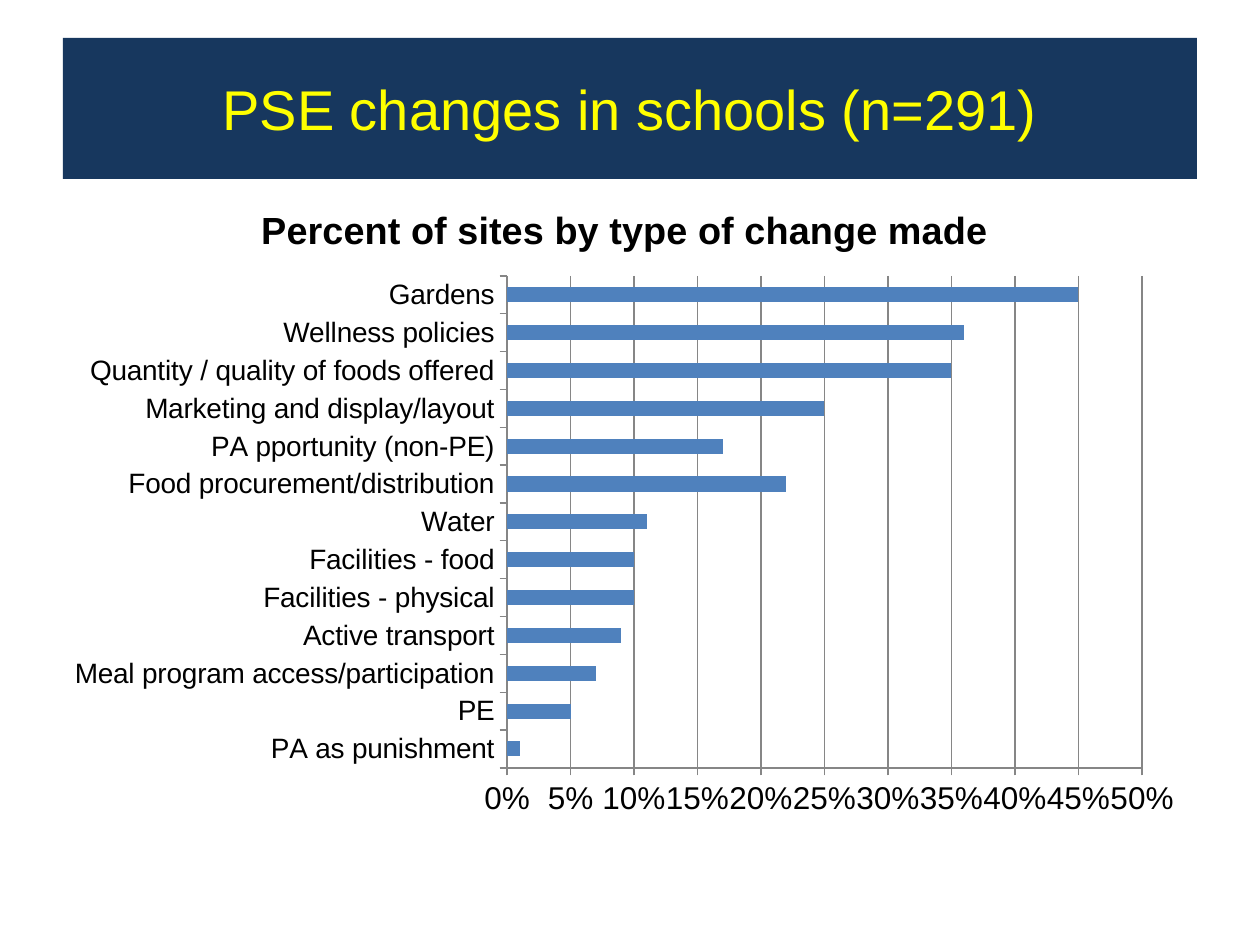
from lxml import etree
from pptx import Presentation
from pptx.chart.data import CategoryChartData
from pptx.dml.color import RGBColor
from pptx.enum.chart import XL_CHART_TYPE, XL_TICK_MARK
from pptx.enum.shapes import MSO_SHAPE
from pptx.enum.text import MSO_ANCHOR, PP_ALIGN
from pptx.oxml.ns import qn
from pptx.util import Emu, Pt

BAR = XL_CHART_TYPE.BAR_CLUSTERED
RECTANGLE = MSO_SHAPE.RECTANGLE
MIDDLE = MSO_ANCHOR.MIDDLE
CENTER = PP_ALIGN.CENTER
OUTSIDE = XL_TICK_MARK.OUTSIDE

FONT = "Arial"
HEADING = "PSE changes in schools (n=291)"
CHART_TITLE = "Percent of sites by type of change made"
CHANGES = [  # bottom bar first
    ("PA as punishment", 0.01),
    ("PE", 0.05),
    ("Meal program access/participation", 0.07),
    ("Active transport", 0.09),
    ("Facilities - physical", 0.10),
    ("Facilities - food", 0.10),
    ("Water", 0.11),
    ("Food procurement/distribution", 0.22),
    ("PA pportunity (non-PE)", 0.17),
    ("Marketing and display/layout", 0.25),
    ("Quantity / quality of foods offered", 0.35),
    ("Wellness policies", 0.36),
    ("Gardens", 0.45),
]
# left, top, width, height in px
BANNER = (63, 38, 1134, 141)
CHART = (53, 179, 1144, 651)
PLOT = (507, 276, 635, 492)


def px(length):
    return Emu(round(length * 914400 / 126))


def color(hex_text):
    return RGBColor.from_string(hex_text)


def style(font, size, hex_text, bold=False):
    font.name = FONT
    font.size = Pt(size)
    font.bold = bold
    font.color.rgb = color(hex_text)


def add_banner(page):
    banner = page.shapes.add_shape(RECTANGLE, *map(px, BANNER))
    banner.shadow.inherit = False
    banner.fill.solid()
    banner.fill.fore_color.rgb = color("17375E")
    banner.line.fill.background()
    frame = banner.text_frame
    frame.word_wrap = True
    frame.vertical_anchor = MIDDLE
    para = frame.paragraphs[0]
    para.text = HEADING
    para.alignment = CENTER
    style(para.font, 32, "FFFF00")


def place_plot(chart):
    """Fix the inner plot area at PLOT, as fractions of the chart."""
    plot_area = chart.plots[0]._element.getparent()
    for old in plot_area.findall(qn("c:layout")):
        plot_area.remove(old)
    layout = etree.Element(qn("c:layout"))
    manual = etree.SubElement(layout, qn("c:manualLayout"))
    left, top, width, height = CHART
    settings = {
        "layoutTarget": "inner",
        "xMode": "edge",
        "yMode": "edge",
        "x": round((PLOT[0] - left) / width, 4),
        "y": round((PLOT[1] - top) / height, 4),
        "w": round(PLOT[2] / width, 4),
        "h": round(PLOT[3] / height, 4),
    }
    for name, value in settings.items():
        etree.SubElement(manual, qn("c:" + name), val=str(value))
    plot_area.insert(0, layout)


def add_change_chart(page):
    data = CategoryChartData(number_format="0%")
    data.categories = [name for name, _ in CHANGES]
    data.add_series(CHART_TITLE, [share for _, share in CHANGES])
    chart = page.shapes.add_chart(BAR, *map(px, CHART), data).chart
    style(chart.font, 18, "000000")
    chart.has_legend = False
    chart.has_title = True
    title = chart.chart_title.text_frame.paragraphs[0]
    title.text = CHART_TITLE
    style(title.font, 21.6, "000000", bold=True)

    bars = chart.plots[0]
    bars.gap_width = 150
    bars.vary_by_categories = False
    fill = bars.series[0].format.fill
    fill.solid()
    fill.fore_color.rgb = color("4F81BD")

    names, shares = chart.category_axis, chart.value_axis
    shares.minimum_scale, shares.maximum_scale = 0, 0.5
    shares.major_unit = 0.05
    shares.has_major_gridlines = True
    shares.tick_labels.number_format = "0%"
    shares.tick_labels.number_format_is_linked = False
    for axis, size in ((names, 16), (shares, 18)):
        axis.major_tick_mark = OUTSIDE
        style(axis.tick_labels.font, size, "000000")
    for part in (names, shares, shares.major_gridlines):
        part.format.line.color.rgb = color("868686")
        part.format.line.width = Pt(0.75)
    # Level labels stay on one row even when they touch
    shares._element.find(qn("c:txPr")).find(qn("a:bodyPr")).set("rot", "0")
    place_plot(chart)


def main():
    deck = Presentation()
    deck.slide_width, deck.slide_height = px(1260), px(945)
    page = deck.slides.add_slide(deck.slide_layouts[6])
    add_banner(page)
    add_change_chart(page)
    deck.save("out.pptx")


if __name__ == "__main__":
    main()
